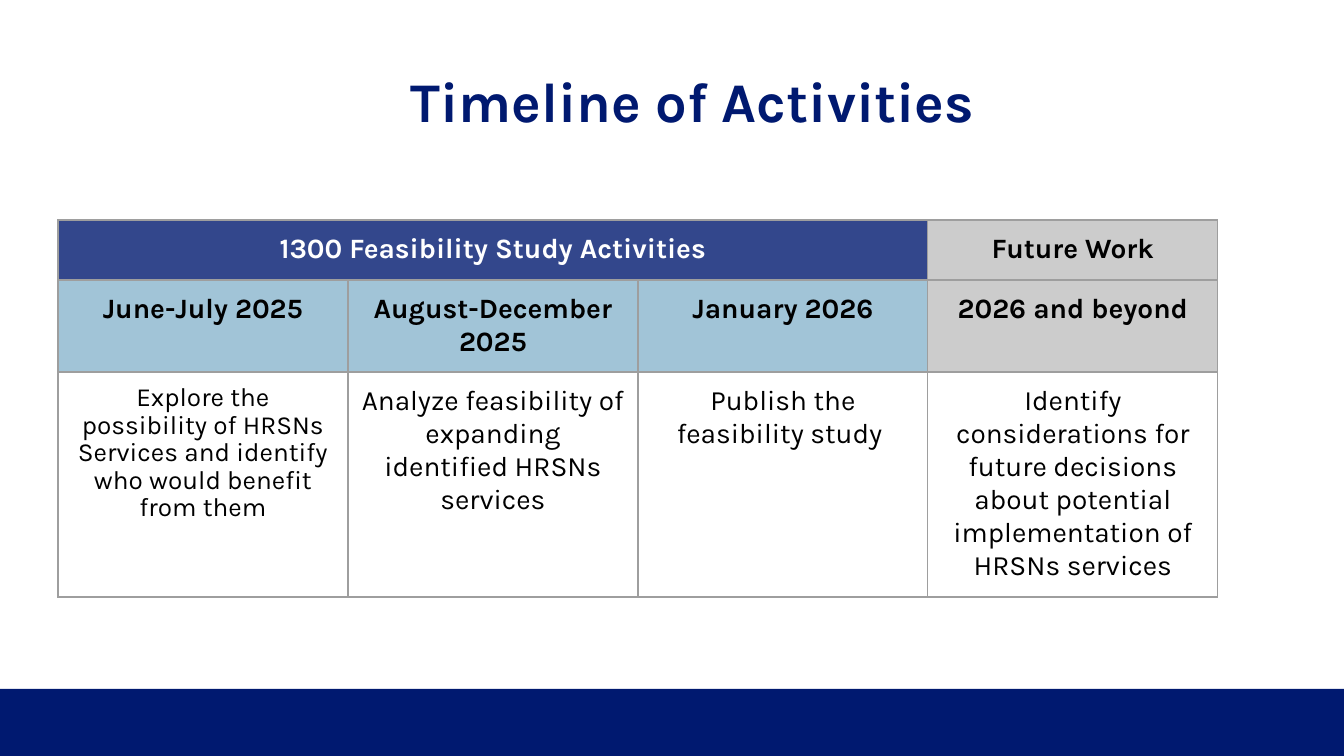
from dataclasses import dataclass

from lxml.etree import SubElement
from pptx import Presentation
from pptx.dml.color import RGBColor
from pptx.enum.shapes import MSO_SHAPE
from pptx.enum.text import MSO_ANCHOR, MSO_AUTO_SIZE, PP_ALIGN
from pptx.oxml.ns import qn
from pptx.util import Emu, Pt

EMU_PER_PX = 914400 / 134.4


def px(length):
    return Emu(round(length * EMU_PER_PX))


@dataclass(frozen=True)
class Theme:
    font: str = "Karla"
    navy: str = "001970"
    sky: str = "A1C4D7"
    gray: str = "CCCCCC"
    border: str = "9E9E9E"
    white: str = "FFFFFF"
    black: str = "000000"
    title_size: int = 30
    table_size: int = 15
    small_size: int = 14
    border_width: float = 0.75
    tight_spacing: float = 0.9


@dataclass(frozen=True)
class TableCell:
    text: str
    fill: str = None
    color: str = Theme.black
    bold: bool = False
    size: int = Theme.table_size
    line_spacing: float = None
    opacity: int = 100
    span: int = 1


class SlideBuilder:
    def __init__(self, slide, theme):
        self.slide = slide
        self.theme = theme

    def format_text(self, text_frame, size, color, bold, line_spacing=None):
        text_frame.word_wrap = True
        for paragraph in text_frame.paragraphs:
            paragraph.alignment = PP_ALIGN.CENTER
            paragraph.line_spacing = line_spacing
            for run in paragraph.runs:
                run.font.name = self.theme.font
                run.font.size = Pt(size)
                run.font.bold = bold
                run.font.color.rgb = RGBColor.from_string(color)

    def add_bar(self, left, top, width, height):
        shape = self.slide.shapes.add_shape(
            MSO_SHAPE.RECTANGLE, px(left), px(top), px(width), px(height))
        shape.shadow.inherit = False
        shape.fill.solid()
        shape.fill.fore_color.rgb = RGBColor.from_string(self.theme.navy)
        shape.line.fill.background()

    def set_title(self, text, left, top, width, height):
        title = self.slide.shapes.title
        title.left, title.top = px(left), px(top)
        title.width, title.height = px(width), px(height)
        text_frame = title.text_frame
        text_frame.text = text
        text_frame.auto_size = MSO_AUTO_SIZE.NONE
        text_frame.vertical_anchor = MSO_ANCHOR.MIDDLE
        text_frame.margin_left = text_frame.margin_right = px(9)
        text_frame.margin_top = text_frame.margin_bottom = px(5)
        self.format_text(text_frame, self.theme.title_size, self.theme.navy,
                         True, self.theme.tight_spacing)

    def add_borders(self, cell):
        properties = cell._tc.get_or_add_tcPr()
        for side in ("lnL", "lnR", "lnT", "lnB"):
            line = SubElement(properties, qn(f"a:{side}"),
                              w=str(Pt(self.theme.border_width)))
            fill = SubElement(line, qn("a:solidFill"))
            SubElement(fill, qn("a:srgbClr"), val=self.theme.border)

    def fill_cell(self, cell, color, opacity):
        if color is None:
            cell.fill.background()
            return
        cell.fill.solid()
        cell.fill.fore_color.rgb = RGBColor.from_string(color)
        if opacity < 100:
            fill = cell._tc.tcPr.find(qn("a:solidFill"))
            SubElement(fill[0], qn("a:alpha"), val=str(opacity * 1000))

    def add_table(self, rows, left, top, column_width, row_heights):
        column_count = sum(content.span for content in rows[0])
        table = self.slide.shapes.add_table(
            len(rows), column_count, px(left), px(top),
            px(column_width * column_count), px(sum(row_heights))).table
        table.first_row = table.horz_banding = False
        for column in table.columns:
            column.width = px(column_width)
        for row, height in zip(table.rows, row_heights):
            row.height = px(height)
        for cell in table.iter_cells():
            self.add_borders(cell)
        for row_index, contents in enumerate(rows):
            column_index = 0
            for content in contents:
                cell = table.cell(row_index, column_index)
                column_index += content.span
                if content.span > 1:
                    cell.merge(table.cell(row_index, column_index - 1))
                self.write_cell(cell, content)

    def write_cell(self, cell, content):
        cell.margin_left = cell.margin_right = px(13)
        cell.margin_top = cell.margin_bottom = px(13)
        self.fill_cell(cell, content.fill, content.opacity)
        cell.text_frame.text = content.text
        self.format_text(cell.text_frame, content.size, content.color,
                         content.bold, content.line_spacing)


def main():
    theme = Theme()
    presentation = Presentation()
    presentation.slide_width, presentation.slide_height = px(1344), px(756)
    slide = presentation.slides.add_slide(presentation.slide_layouts[5])
    builder = SlideBuilder(slide, theme)

    builder.add_bar(0, 689, 1344, 67)
    builder.set_title("Timeline of Activities", 58, 48, 1269, 112)

    periods = ["June-July 2025", "August-December 2025", "January 2026"]
    activities = [
        "Analyze feasibility of expanding identified HRSNs services",
        "Publish the feasibility study ",
        "Identify considerations for future decisions about potential "
        "implementation of HRSNs services",
    ]
    rows = [
        [TableCell("1300 Feasibility Study Activities", theme.navy,
                   theme.white, bold=True, opacity=80, span=3),
         TableCell("Future Work", theme.gray, bold=True)],
        [TableCell(period, theme.sky, bold=True) for period in periods]
        + [TableCell("2026 and beyond", theme.gray, bold=True)],
        [TableCell("Explore the possibility of HRSNs Services and identify "
                   "who would benefit from them", size=theme.small_size,
                   line_spacing=theme.tight_spacing)]
        + [TableCell(activity) for activity in activities],
    ]
    builder.add_table(rows, 58, 220, 290, [60, 92, 225])
    presentation.save("out.pptx")


if __name__ == "__main__":
    main()
